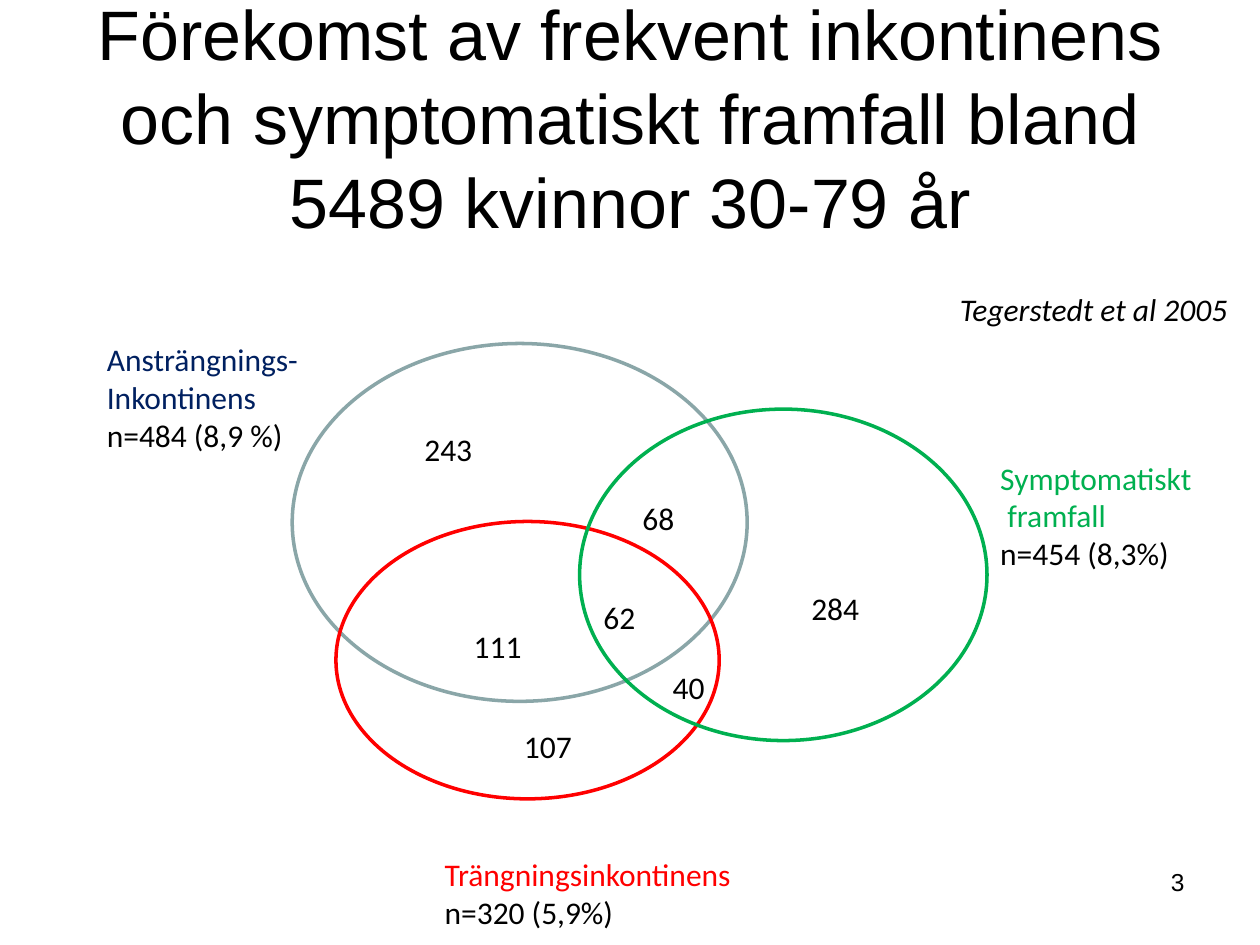
import pptx
import pptx.dml.color
import pptx.enum.shapes
import pptx.enum.text
import pptx.util

Pt = pptx.util.Pt
ALIGN = pptx.enum.text.PP_ALIGN
ANCHOR = pptx.enum.text.MSO_ANCHOR
AUTO_SIZE = pptx.enum.text.MSO_AUTO_SIZE

BLACK, NAVY, GREY, RED, GREEN = "000000", "002060", "8AA6A8", "FF0000", "00B050"


def color(hex_string):
    return pptx.dml.color.RGBColor.from_string(hex_string)


class SlideBuilder:
    heading_font = {"name": "Arial", "size": Pt(40)}
    number_font = {"name": "Arial", "size": Pt(14)}
    label_font = {"name": "Calibri", "size": Pt(18)}
    outline_width = Pt(2)

    def __init__(self, slide):
        self.slide = slide

    def format_run(self, run, values, hex_string):
        for attribute, value in values.items():
            setattr(run.font, attribute, value)
        run.font.color.rgb = color(hex_string)

    def title(self, text, left, top, width, height):
        shape = self.slide.shapes.title
        box = {"left": left, "top": top, "width": width, "height": height}
        for attribute, value in box.items():
            setattr(shape, attribute, Pt(value))
        frame = shape.text_frame
        frame.text = text
        frame.auto_size = AUTO_SIZE.NONE
        frame.vertical_anchor = ANCHOR.MIDDLE
        paragraph = frame.paragraphs[0]
        paragraph.alignment = ALIGN.CENTER
        paragraph.line_spacing = Pt(48)
        self.format_run(paragraph.runs[0], self.heading_font, BLACK)

    def text(self, lines, left, top, width, height, font=None,
             align=ALIGN.LEFT, wrap=False):
        """Add a text box; lines is a list of (text, color) pairs."""
        shape = self.slide.shapes.add_textbox(Pt(left), Pt(top), Pt(width), Pt(height))
        frame = shape.text_frame
        frame.word_wrap = wrap
        frame.auto_size = AUTO_SIZE.NONE if wrap else AUTO_SIZE.SHAPE_TO_FIT_TEXT
        for index, (content, hex_string) in enumerate(lines):
            paragraph = frame.add_paragraph() if index else frame.paragraphs[0]
            paragraph.alignment = align
            run = paragraph.add_run()
            run.text = content
            self.format_run(run, font or self.label_font, hex_string)

    def ellipse(self, hex_string, left, top, width, height):
        shape = self.slide.shapes.add_shape(
            pptx.enum.shapes.MSO_SHAPE.OVAL, Pt(left), Pt(top), Pt(width), Pt(height))
        shape.shadow.inherit = False
        shape.fill.background()
        shape.line.color.rgb = color(hex_string)
        shape.line.width = self.outline_width


def main():
    presentation = pptx.Presentation()
    presentation.slide_width, presentation.slide_height = Pt(720), Pt(540)
    title_only = presentation.slide_layouts[5]
    builder = SlideBuilder(presentation.slides.add_slide(title_only))

    # Title and slide number
    builder.title("Förekomst av frekvent inkontinens och symptomatiskt framfall "
                  "bland 5489 kvinnor 30-79 år", 36, 21.6, 648, 90)
    builder.text([("3", BLACK)], 516, 492, 168, 37.5,
                 font=builder.number_font, align=ALIGN.RIGHT, wrap=True)

    # Group labels and reference
    builder.text([("Ansträngnings-", NAVY), ("Inkontinens", NAVY),
                  ("n=484 (8,9 %)", BLACK)], 54, 190.8, 124.6, 72.7)
    builder.text([("Trängningsinkontinens", RED), ("n=320 (5,9%)", BLACK)],
                 247, 485.3, 180, 51)
    builder.text([("Symptomatiskt", GREEN), (" framfall", GREEN),
                  ("n=454 (8,3%)", BLACK)], 564.5, 258.5, 124.6, 72.7)
    builder.text([("Tegerstedt et al 2005", BLACK)], 541.4, 162, 169.2, 29,
                 font={**builder.label_font, "italic": True})

    # Venn circles
    builder.ellipse(GREY, 167, 196.3, 260, 204.5)
    builder.ellipse(RED, 192, 298, 219, 158.5)
    builder.ellipse(GREEN, 331.2, 233.8, 232.8, 189.4)

    # Counts in each region
    counts = [
        ("243", 235.4, 242),
        ("111", 263.6, 355),
        ("107", 292.3, 412),
        ("40", 377.3, 378),
        ("62", 337.7, 338),
        ("68", 360, 281.5),
        ("284", 456.5, 332.8),
    ]
    for count, left, top in counts:
        width = 42.5 if len(count) == 3 else 33.1
        builder.text([(count, BLACK)], left, top, width, 29)

    presentation.save("out.pptx")


if __name__ == "__main__":
    main()
